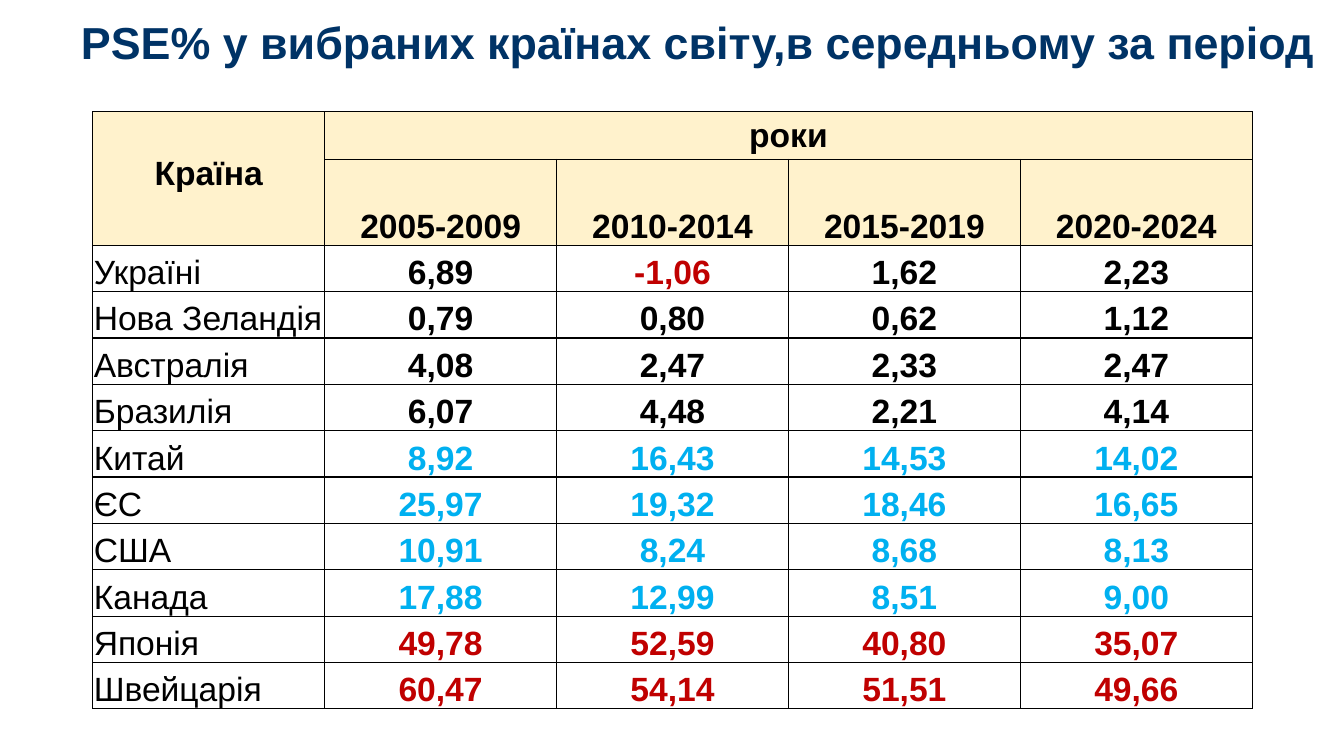
from lxml import etree
from pptx import Presentation
from pptx.dml.color import RGBColor
from pptx.enum.text import MSO_ANCHOR, PP_ALIGN
from pptx.oxml import parse_xml
from pptx.util import Inches, Pt

NAVY = RGBColor(0x00, 0x33, 0x66)
CREAM = RGBColor(0xFF, 0xF2, 0xCC)
WHITE = RGBColor(0xFF, 0xFF, 0xFF)
BLACK = RGBColor(0x00, 0x00, 0x00)
BLUE = RGBColor(0x00, 0xB0, 0xF0)
RED = RGBColor(0xC0, 0x00, 0x00)
LEFT, CENTER = PP_ALIGN.LEFT, PP_ALIGN.CENTER
TOP, MIDDLE, BOTTOM = MSO_ANCHOR.TOP, MSO_ANCHOR.MIDDLE, MSO_ANCHOR.BOTTOM
FONT = "Arial"
DRAWING_NS = "http://schemas.openxmlformats.org/drawingml/2006/main"

PERIODS = ["2005-2009", "2010-2014", "2015-2019", "2020-2024"]
COUNTRIES = [
    ("Україні", BLACK, ["6,89", "-1,06", "1,62", "2,23"]),
    ("Нова Зеландія", BLACK, ["0,79", "0,80", "0,62", "1,12"]),
    ("Австралія", BLACK, ["4,08", "2,47", "2,33", "2,47"]),
    ("Бразилія", BLACK, ["6,07", "4,48", "2,21", "4,14"]),
    ("Китай", BLUE, ["8,92", "16,43", "14,53", "14,02"]),
    ("ЄС", BLUE, ["25,97", "19,32", "18,46", "16,65"]),
    ("США", BLUE, ["10,91", "8,24", "8,68", "8,13"]),
    ("Канада", BLUE, ["17,88", "12,99", "8,51", "9,00"]),
    ("Японія", RED, ["49,78", "52,59", "40,80", "35,07"]),
    ("Швейцарія", RED, ["60,47", "54,14", "51,51", "49,66"]),
]


def style_paragraph(paragraph, size, color, bold, align):
    paragraph.alignment = align
    paragraph.font.name = FONT
    paragraph.font.size = Pt(size)
    paragraph.font.bold = bold
    paragraph.font.color.rgb = color


def write_cell(cell, text, color=BLACK, bold=True, align=CENTER):
    cell.text = text
    style_paragraph(cell.text_frame.paragraphs[0], 24, color, bold, align)
    cell.vertical_anchor = BOTTOM
    cell.margin_left = cell.margin_right = cell.margin_top = Inches(0.01)
    cell.margin_bottom = 0


prs = Presentation()
prs.slide_width = Inches(13.33)
prs.slide_height = Inches(7.5)
slide = prs.slides.add_slide(prs.slide_layouts[5])

title = slide.shapes.title
title.left, title.top = Inches(0.69), Inches(0.15)
title.width, title.height = Inches(12.47), Inches(0.59)
title.text_frame.text = "PSE% у вибраних країнах світу,в середньому за період"
title.text_frame.vertical_anchor = MIDDLE
heading = title.text_frame.paragraphs[0]
heading.line_spacing = 0.9
style_paragraph(heading, 32, NAVY, True, CENTER)

row_count, column_count = len(COUNTRIES) + 2, len(PERIODS) + 1
support = slide.shapes.add_table(
    row_count, column_count, Inches(0.92), Inches(1.11), Inches(11.5), Inches(5.52)
).table

for row in range(row_count):
    for column in range(column_count):
        cell = support.cell(row, column)
        properties = cell._tc.get_or_add_tcPr()
        for side in ("lnL", "lnR", "lnT", "lnB"):
            border = parse_xml(f'<a:{side} xmlns:a="{DRAWING_NS}" w="12700"/>')
            line_fill = etree.SubElement(border, f"{{{DRAWING_NS}}}solidFill")
            etree.SubElement(line_fill, f"{{{DRAWING_NS}}}srgbClr", val=str(BLACK))
            properties.append(border)
        cell.fill.solid()
        cell.fill.fore_color.rgb = CREAM if row < 2 else WHITE

country_header = support.cell(0, 0)
country_header.merge(support.cell(1, 0))
write_cell(country_header, "Країна")
country_header.vertical_anchor = TOP
country_header.margin_top = Inches(0.43)
country_header.margin_bottom = Inches(0.05)

years_header = support.cell(0, 1)
years_header.merge(support.cell(0, column_count - 1))
write_cell(years_header, "роки")
years_header.vertical_anchor = TOP
years_header.margin_top = years_header.margin_bottom = Inches(0.05)

for column, period in enumerate(PERIODS, start=1):
    write_cell(support.cell(1, column), period)

for row, (country, color, shares) in enumerate(COUNTRIES, start=2):
    write_cell(support.cell(row, 0), country, bold=False, align=LEFT)
    for column, share in enumerate(shares, start=1):
        share_color = RED if share.startswith("-") else color
        write_cell(support.cell(row, column), share, share_color)

prs.save("out.pptx")
